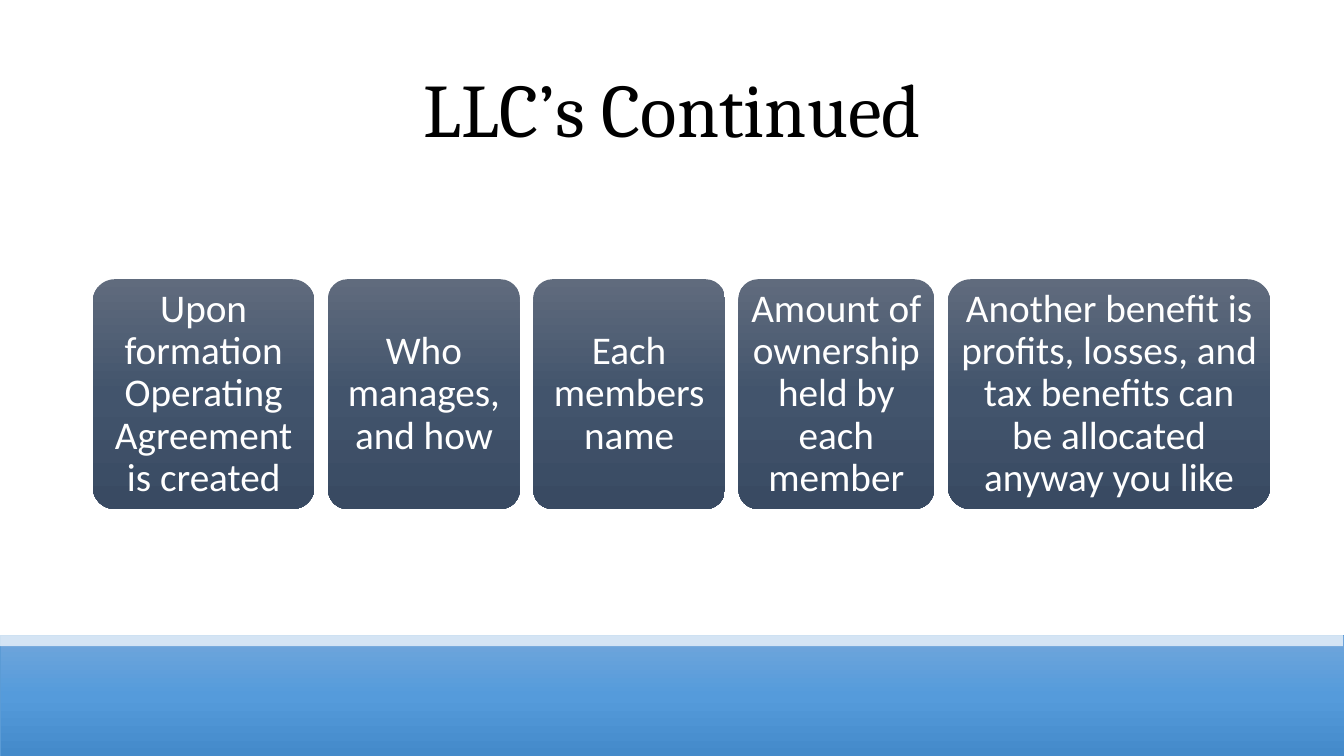
from copy import deepcopy

from pptx import Presentation
from pptx.dml.color import RGBColor
from pptx.enum.shapes import MSO_SHAPE
from pptx.enum.text import MSO_ANCHOR, PP_ALIGN
from pptx.oxml.ns import qn
from pptx.util import Inches, Pt
from lxml import etree

RECT, ROUNDED = MSO_SHAPE.RECTANGLE, MSO_SHAPE.ROUNDED_RECTANGLE
MIDDLE, CENTER = MSO_ANCHOR.MIDDLE, PP_ALIGN.CENTER
BAND_COLORS = ["71A6DB", "559BDB", "448ACA"]
CARD_COLORS = ["606B7D", "42546C", "394A62"]


def add_box(kind, left, top, width, height, colors):
    """Add a borderless shape with a solid or three-stop vertical fill."""
    sp = s.shapes.add_shape(kind, Inches(left), Inches(top), Inches(width), Inches(height))
    sp.shadow.inherit = False
    sp.line.fill.background()
    if len(colors) == 1:
        sp.fill.solid()
        sp.fill.fore_color.rgb = RGBColor.from_string(colors[0])
        return sp
    sp.fill.gradient()
    sp.fill.gradient_angle = 270
    stops = sp._element.spPr.find(qn("a:gradFill")).find(qn("a:gsLst"))
    stops.append(deepcopy(stops[-1]))
    for i, stop in enumerate(sp.fill.gradient_stops):
        stop.position = i / 2
        stop.color.rgb = RGBColor.from_string(colors[i])
    return sp


def set_text(sp, text, size=28, font="Calibri", color="FFFFFF"):
    tf = sp.text_frame
    tf.word_wrap = True
    tf.vertical_anchor = MIDDLE
    tf.margin_left = tf.margin_right = Inches(0.06)
    tf.margin_top = tf.margin_bottom = Inches(0.04)
    p = tf.paragraphs[0]
    p.alignment = CENTER
    p.line_spacing = 0.9
    r = p.add_run()
    r.text = text
    r.font.size = Pt(size)
    r.font.name = font
    r.font.color.rgb = RGBColor.from_string(color)


prs = Presentation()
prs.slide_width, prs.slide_height = Inches(13.33), Inches(7.5)
s = prs.slides.add_slide(prs.slide_layouts[5])

# Title
title = s.shapes.title
title.left, title.top = Inches(0.92), Inches(0.4)
title.width, title.height = Inches(11.5), Inches(1.45)
set_text(title, "LLC’s Continued", size=54, font="Cambria", color="000000")

# Blue band with a translucent strip along its top
band = add_box(RECT, 0, 6.3, 13.33, 1.2, BAND_COLORS)
band.line.color.rgb = RGBColor.from_string("5B9BD5")
band.line.width = Pt(0.5)
strip = add_box(RECT, 0, 6.29, 13.32, 0.12, ["FFFFFF"])
strip_color = strip._element.spPr.find(qn("a:solidFill"))[0]
etree.SubElement(strip_color, qn("a:alpha")).set("val", "70000")

# Row of cards, evenly spaced across the row
cards = [
    (2.2, "Upon formation Operating Agreement is created"),
    (1.9, "Who manages, and how"),
    (1.9, "Each members name"),
    (1.94, "Amount of ownership held by each member"),
    (3.2, "Another benefit is profits, losses, and tax benefits can be allocated anyway you like"),
]
left, right = 0.92, 12.6
gap = (right - left - sum(width for width, _ in cards)) / (len(cards) - 1)
for width, text in cards:
    card = add_box(ROUNDED, left, 2.77, width, 2.28, CARD_COLORS)
    card.adjustments[0] = 0.1
    set_text(card, text)
    left += width + gap

prs.save("out.pptx")
